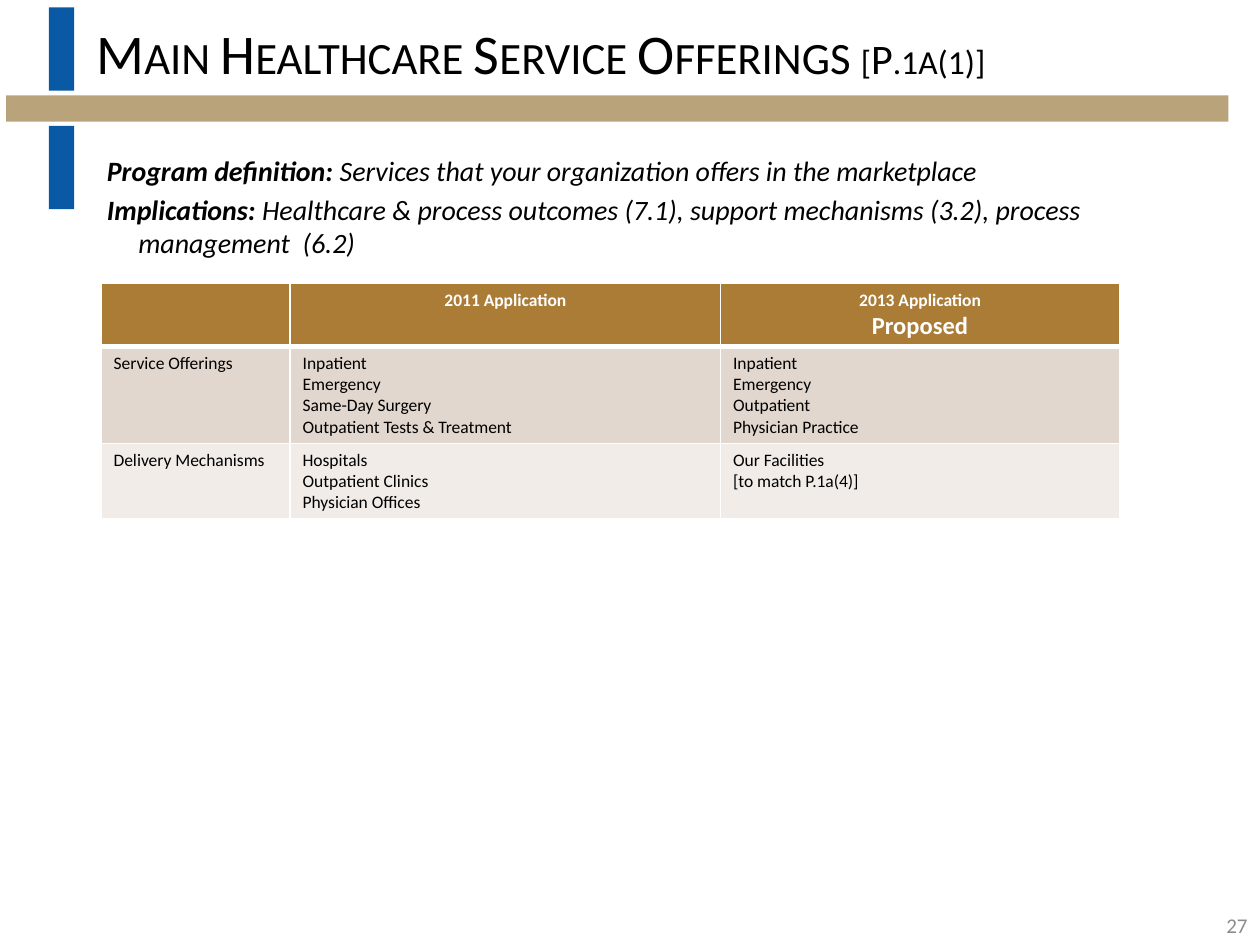
from lxml import etree
from pptx import Presentation
from pptx.enum import shapes, text
from pptx.dml.color import RGBColor
from pptx.oxml import ns
from pptx.util import Pt

COLORS = {"blue": "0A59A5", "sand": "B8A37A", "bronze": "AA7C36", "beige": "E2D7CE",
          "pale": "F1ECE8", "black": "000000", "white": "FFFFFF", "gray": "8C8C8C"}
FONT = "Calibri"

# left, top, width, height, colour
BARS = [(28, 4.3, 14.4, 47.5, "blue"), (28, 72, 14.4, 47.5, "blue"),
        (3.5, 54.5, 698.5, 15, "sand")]

TITLE = [("Main Healthcare Service Offerings ", 32), ("[P.1a(1)]", 24)]
NOTES = [
    ("Program definition: ", "Services that your organization offers in the marketplace"),
    ("Implications: ", "Healthcare & process outcomes (7.1), support mechanisms (3.2), "
                       "process management  (6.2)"),
]
PAGE_NUMBER = "27"

COLUMN_WIDTHS = [108, 246, 228]
ROW_HEIGHT = 29.5
ROW_FILLS = ["bronze", "beige", "pale"]
ROWS = [
    [[], ["2011 Application"], ["2013 Application", "Proposed"]],
    [["Service Offerings"],
     ["Inpatient", "Emergency", "Same-Day Surgery", "Outpatient Tests & Treatment"],
     ["Inpatient", "Emergency", "Outpatient", "Physician Practice"]],
    [["Delivery Mechanisms"],
     ["Hospitals", "Outpatient Clinics", "Physician Offices"],
     ["Our Facilities", "[to match P.1a(4)]"]],
]
LARGE_WORDS = {"Proposed": 14}


def paint(fill, color):
    fill.solid()
    fill.fore_color.rgb = RGBColor.from_string(COLORS[color])


def add_span(para, words, size, color="black", bold=False, italic=False):
    span = para.add_run()
    span.text = words
    font = span.font
    font.name, font.size, font.bold, font.italic = FONT, Pt(size), bold, italic
    font.color.rgb = RGBColor.from_string(COLORS[color])
    return span


def add_box(page, left, top, width, height, anchor):
    box = page.shapes.add_textbox(Pt(left), Pt(top), Pt(width), Pt(height))
    frame = box.text_frame
    frame.word_wrap = True
    frame.vertical_anchor = anchor
    return frame


def fill_paragraphs(frame, items):
    """Yield each item with its own paragraph, starting with the existing one."""
    for index, item in enumerate(items):
        yield (frame.add_paragraph() if index else frame.paragraphs[0]), item


def set_borders(cell, bottom):
    """White cell edges, drawn before the fill as the schema requires."""
    props = cell._tc.get_or_add_tcPr()
    for place, (side, width) in enumerate([("L", 1), ("R", 1), ("T", 1), ("B", bottom)]):
        line = etree.Element(ns.qn(f"a:ln{side}"), w=str(Pt(width)))
        solid = etree.SubElement(line, ns.qn("a:solidFill"))
        etree.SubElement(solid, ns.qn("a:srgbClr"), val=COLORS["white"])
        props.insert(place, line)


def add_offerings_table(page):
    table = page.shapes.add_table(len(ROWS), len(COLUMN_WIDTHS), Pt(57.75), Pt(162),
                                  Pt(sum(COLUMN_WIDTHS)), Pt(ROW_HEIGHT * len(ROWS))).table
    table.horz_banding = False
    for column, width in zip(table.columns, COLUMN_WIDTHS):
        column.width = Pt(width)
    for r, cells in enumerate(ROWS):
        header = r == 0
        table.rows[r].height = Pt(ROW_HEIGHT)
        for c, lines in enumerate(cells):
            cell = table.cell(r, c)
            paint(cell.fill, ROW_FILLS[r])
            set_borders(cell, 3 if header else 1)
            if not lines:
                cell.text_frame.paragraphs[0].font.size = Pt(10)
            for para, words in fill_paragraphs(cell.text_frame, lines):
                para.alignment = text.PP_ALIGN.CENTER if header else text.PP_ALIGN.LEFT
                add_span(para, words, LARGE_WORDS.get(words, 10),
                         "white" if header else "black", bold=header)


def main():
    deck = Presentation()
    deck.slide_width, deck.slide_height = Pt(720), Pt(540)
    page = deck.slides.add_slide(deck.slide_layouts[6])

    for left, top, width, height, color in BARS:
        bar = page.shapes.add_shape(shapes.MSO_SHAPE.RECTANGLE,
                                    Pt(left), Pt(top), Pt(width), Pt(height))
        bar.shadow.inherit = False
        paint(bar.fill, color)
        bar.line.fill.background()

    title = add_box(page, 48, 6, 648, 48, text.MSO_ANCHOR.MIDDLE)
    for words, size in TITLE:
        span = add_span(title.paragraphs[0], words, size)
        span.font._element.set("cap", "small")

    notes = add_box(page, 54, 84, 630, 48, text.MSO_ANCHOR.TOP)
    for para, (label, words) in fill_paragraphs(notes, NOTES):
        para.space_before = Pt(3.2)
        props = para._p.get_or_add_pPr()
        props.set("marL", str(Pt(18)))
        props.set("indent", str(Pt(-18)))
        add_span(para, label, 16, bold=True, italic=True)
        add_span(para, words, 16, italic=True)

    number = add_box(page, 552, 514, 168, 29, text.MSO_ANCHOR.MIDDLE).paragraphs[0]
    number.alignment = text.PP_ALIGN.RIGHT
    add_span(number, PAGE_NUMBER, 12, "gray")

    add_offerings_table(page)
    deck.save("out.pptx")


if __name__ == "__main__":
    main()
